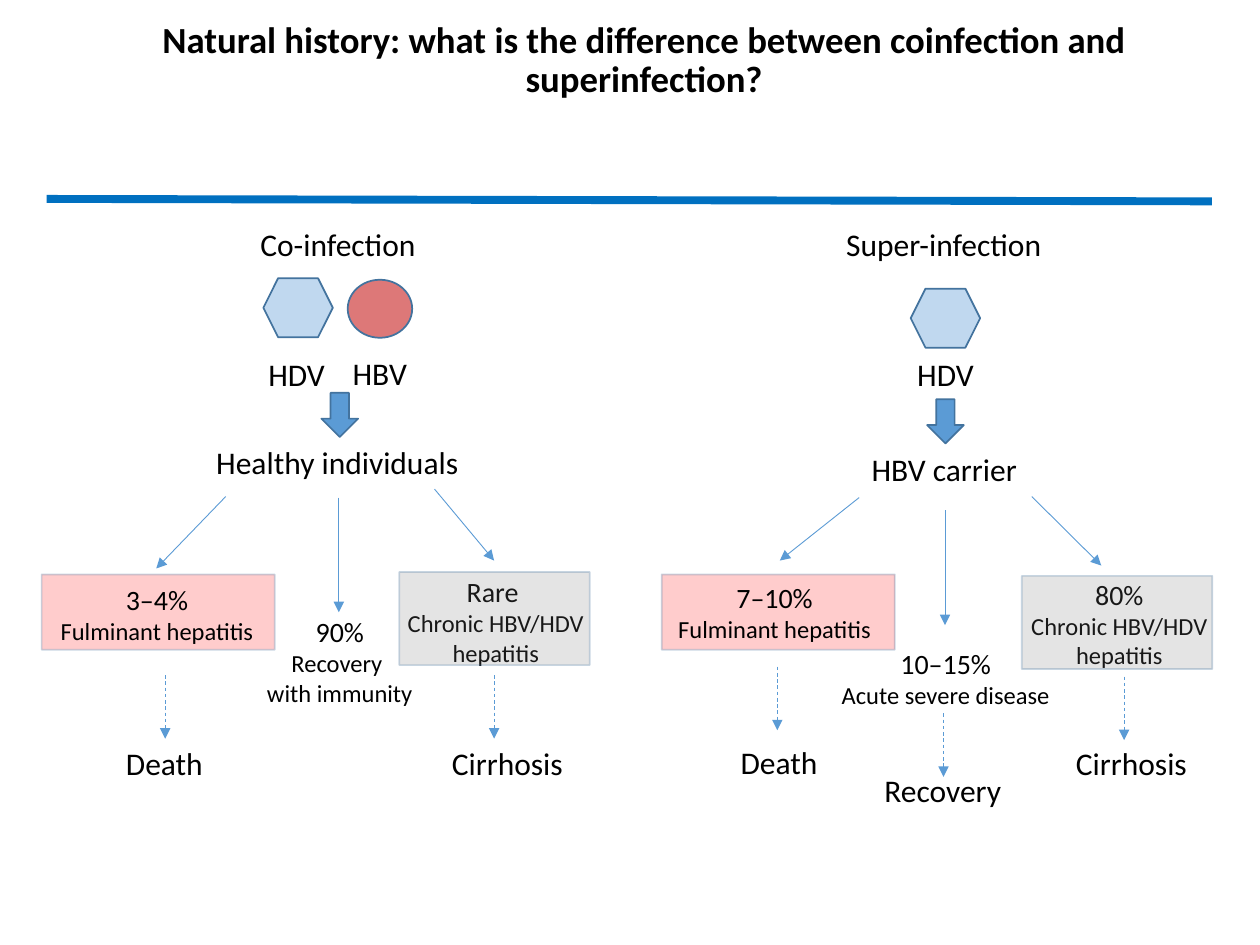
"""Build the slide comparing coinfection with superinfection."""
from typing import NamedTuple

from lxml.etree import SubElement
from pptx import Presentation
from pptx.dml.color import RGBColor
from pptx.enum.dml import MSO_LINE_DASH_STYLE as Dash
from pptx.enum.shapes import MSO_CONNECTOR as Connector, MSO_SHAPE as Preset
from pptx.enum.text import MSO_ANCHOR as Anchor, MSO_AUTO_SIZE as AutoSize, PP_ALIGN as Align
from pptx.oxml.ns import qn
from pptx.util import Cm, Pt

FONT, BLACK, BLUE, EDGE, RULE = "Calibri", "000000", "5B9BD5", "43739E", "0070C0"
RED, GREY, DARK_RED = "FF0000", "7C7C7C", "C00000"


class Label(NamedTuple):
    lines: tuple[str, ...]
    left: float
    top: float
    width: float
    sizes: tuple[int, ...] = (18,)


class Symbol(NamedTuple):
    preset: Preset
    left: float
    top: float
    width: float
    height: float
    fill: str
    opacity: int = 100
    edge_opacity: int = 100


class Arrow(NamedTuple):
    x1: float
    y1: float
    x2: float
    y2: float
    dashed: bool = False


def outcome(rate: str, *lines: str, left: float, top: float, width: float) -> Label:
    """Describe a rate with smaller lines of explanation below it."""
    return Label((rate, *lines), left, top, width, (16,) + (14,) * len(lines))


def outcome_box(left: float, top: float, width: float, height: float, fill: str) -> Symbol:
    """Describe a pale translucent rectangle."""
    return Symbol(Preset.RECTANGLE, left, top, width, height, fill, 20, 28)


def dashed_arrow(x: float, top: float) -> Arrow:
    """Describe a short dashed arrow pointing straight down."""
    return Arrow(x, top, x, top + 1.28, True)


BOXES_BELOW = [
    outcome_box(0.84, 11.58, 4.7, 1.52, RED),
    outcome_box(13.34, 11.58, 4.7, 1.52, RED),
]
BOXES_ABOVE = [
    outcome_box(8.05, 11.53, 3.84, 1.88, GREY),
    outcome_box(20.6, 11.61, 3.84, 1.88, GREY),
]
SYMBOLS = [
    Symbol(Preset.HEXAGON, 5.31, 5.61, 1.4, 1.19, BLUE, 38),
    Symbol(Preset.HEXAGON, 18.36, 5.82, 1.4, 1.19, BLUE, 38),
    Symbol(Preset.OVAL, 7.01, 5.64, 1.3, 1.17, DARK_RED, 53),
    Symbol(Preset.DOWN_ARROW, 6.48, 7.92, 0.74, 0.89, BLUE),
    Symbol(Preset.DOWN_ARROW, 18.69, 8.05, 0.74, 0.89, BLUE),
]
LABELS = [
    Label(("Co-infection",), 5, 4.42, 3.84),
    Label(("Super-infection",), 16.81, 4.42, 4.52),
    Label(("Healthy individuals",), 4.11, 8.81, 5.46),
    Label(("HBV carrier",), 17.32, 8.94, 3.48),
    outcome("3–4%", "Fulminant hepatitis", left=0.94, top=11.61, width=4.45),
    outcome("90%", "Recovery ", "with immunity", left=5.11, top=12.27, width=3.48),
    outcome("Rare ", "Chronic HBV/HDV", "hepatitis", left=7.95, top=11.46, width=4.09),
    outcome("7–10%", "Fulminant hepatitis", left=13.39, top=11.58, width=4.45),
    outcome("10–15%", "Acute severe disease", left=16.69, top=12.9, width=4.75),
    outcome("80%", "Chronic HBV/HDV", "hepatitis", left=20.52, top=11.51, width=4.09),
    Label(("Death",), 2.29, 14.88, 2.08),
    Label(("Cirrhosis",), 8.86, 14.88, 2.77),
    Label(("Death",), 14.68, 14.86, 2.08),
    Label(("Cirrhosis",), 21.44, 14.88, 2.77),
    Label(("Recovery",), 17.58, 15.42, 2.9),
    Label(("HDV",), 5.16, 7.04, 1.7),
    Label(("HBV",), 6.86, 7.01, 1.63),
    Label(("HDV",), 18.24, 7.04, 1.68),
]
ARROWS = [
    Arrow(4.55, 10.01, 3.15, 11.46),
    Arrow(6.83, 10.03, 6.83, 12.34),
    Arrow(8.76, 9.86, 9.96, 11.3),
    Arrow(19.05, 10.29, 19.05, 12.6),
    Arrow(17.32, 10.03, 15.72, 11.3),
    Arrow(20.8, 10.01, 22.2, 11.4),
    dashed_arrow(3.33, 13.61),
    dashed_arrow(9.96, 13.61),
    dashed_arrow(15.67, 13.44),
    dashed_arrow(19.02, 14.38),
    dashed_arrow(22.66, 13.64),
]


def paint(target, color: str, opacity: int = 100) -> None:
    """Give a fill a solid colour with an opacity in percent."""
    target.solid()
    target.fore_color.rgb = RGBColor.from_string(color)
    if opacity < 100:
        tint = target.fore_color._xFill.find(qn("a:srgbClr"))
        SubElement(tint, qn("a:alpha"), val=str(opacity * 1000))


def write(para, text: str, *, size: int, bold: bool = False, align: Align = Align.CENTER) -> None:
    """Add one formatted run of text to a paragraph."""
    para.alignment = align
    span = para.add_run()
    span.text = text
    span.font.name, span.font.size, span.font.bold = FONT, Pt(size), bold
    paint(span.font.fill, BLACK)


def draw_label(page, label: Label) -> None:
    """Draw a text box with one paragraph per line."""
    height = 0.25 + sum(label.sizes) * 0.043
    box = page.shapes.add_textbox(Cm(label.left), Cm(label.top), Cm(label.width), Cm(height))
    frame = box.text_frame
    frame.word_wrap = False
    frame.auto_size = AutoSize.SHAPE_TO_FIT_TEXT
    align = Align.CENTER if len(label.lines) > 1 else Align.LEFT
    for index, (text, size) in enumerate(zip(label.lines, label.sizes)):
        para = frame.add_paragraph() if index else frame.paragraphs[0]
        write(para, text, size=size, align=align)


def draw_symbol(page, symbol: Symbol) -> None:
    """Draw a filled and outlined preset shape."""
    shape = page.shapes.add_shape(
        symbol.preset, Cm(symbol.left), Cm(symbol.top), Cm(symbol.width), Cm(symbol.height))
    shape.shadow.inherit = False
    paint(shape.fill, symbol.fill, symbol.opacity)
    paint(shape.line.fill, EDGE, symbol.edge_opacity)
    shape.line.width = Pt(1)


def draw_line(page, arrow: Arrow, color: str = BLUE, width: float = 0.5, head: bool = True) -> None:
    """Draw a straight connector, with an arrowhead if wanted."""
    connector = page.shapes.add_connector(
        Connector.STRAIGHT, Cm(arrow.x1), Cm(arrow.y1), Cm(arrow.x2), Cm(arrow.y2))
    paint(connector.line.fill, color)
    connector.line.width = Pt(width)
    if arrow.dashed:
        connector.line.dash_style = Dash.DASH
    if head:
        SubElement(connector.line._get_or_add_ln(), qn("a:tailEnd"), type="triangle")
    SubElement(connector._element.spPr, qn("a:effectLst"))


def draw_title(page, text: str) -> None:
    """Place and format the title placeholder."""
    title = page.shapes.title
    title.left, title.top, title.width, title.height = Cm(0.64), Cm(0.56), Cm(24.69), Cm(1.57)
    frame = title.text_frame
    frame.word_wrap, frame.auto_size = True, AutoSize.NONE
    frame.vertical_anchor = Anchor.BOTTOM
    frame.margin_left = frame.margin_right = Cm(0.18)
    frame.margin_top = frame.margin_bottom = Cm(0.1)
    para = frame.paragraphs[0]
    para.line_spacing = 0.9
    write(para, text, size=21, bold=True)


def main() -> None:
    """Build and save the deck."""
    deck = Presentation()
    deck.slide_width, deck.slide_height = Cm(25.4), Cm(19.05)
    page = deck.slides.add_slide(deck.slide_layouts.get_by_name("Title Only"))
    draw_title(page, "Natural history: what is the difference between coinfection and superinfection?")
    for symbol in BOXES_BELOW + SYMBOLS:
        draw_symbol(page, symbol)
    for label in LABELS:
        draw_label(page, label)
    for arrow in ARROWS:
        draw_line(page, arrow)
    for symbol in BOXES_ABOVE:
        draw_symbol(page, symbol)
    draw_line(page, Arrow(0.94, 4.01, 24.43, 4.06), RULE, 4.5, head=False)
    deck.save("out.pptx")


if __name__ == "__main__":
    main()
